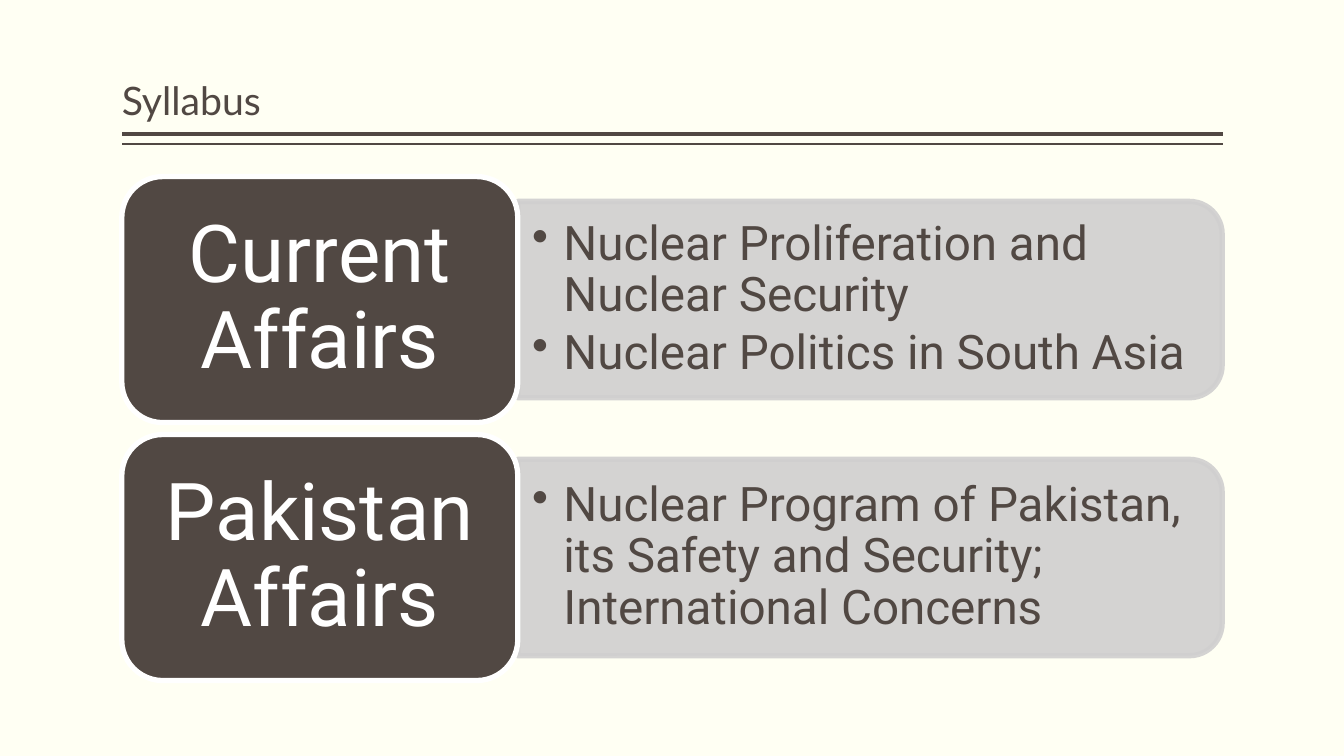
from lxml import etree
from pptx import Presentation
from pptx.dml.color import RGBColor
from pptx.enum.shapes import MSO_CONNECTOR, MSO_SHAPE
from pptx.enum.text import MSO_ANCHOR, PP_ALIGN
from pptx.oxml.ns import qn
from pptx.util import Cm, Pt

STRAIGHT = MSO_CONNECTOR.STRAIGHT
ROUNDED = MSO_SHAPE.ROUNDED_RECTANGLE
TOP_ROUNDED = MSO_SHAPE.ROUND_2_SAME_RECTANGLE
MIDDLE, BOTTOM = MSO_ANCHOR.MIDDLE, MSO_ANCHOR.BOTTOM
LEFT, CENTER = PP_ALIGN.LEFT, PP_ALIGN.CENTER

CREAM = RGBColor(0xFF, 0xFF, 0xF3)
BROWN = RGBColor(0x51, 0x48, 0x43)
GREY = RGBColor(0xD0, 0xCF, 0xCF)
WHITE = RGBColor(0xFF, 0xFF, 0xFF)

MARGIN, RIGHT_EDGE = 3.07, 30.81
TOPICS = [
    ("Current Affairs", ["Nuclear Proliferation and Nuclear Security",
                         "Nuclear Politics in South Asia"]),
    ("Pakistan Affairs", ["Nuclear Program of Pakistan, its Safety and Security; "
                          "International Concerns"]),
]
FIRST_TOP, ROW_PITCH = 4.45, 6.5
BLOCK_WIDTH, BLOCK_HEIGHT = 9.98, 6.2
PANEL_WIDTH, PANEL_HEIGHT = 17.75, 4.95
LIST_WIDTH, LIST_HEIGHT = 17.5, 4.47


class SyllabusSlide:
    def __init__(self, deck):
        self.page = deck.slides.add_slide(deck.slide_layouts[6])
        self.page.background.fill.solid()
        self.page.background.fill.fore_color.rgb = CREAM

    def rule(self, y, weight):
        line = self.page.shapes.add_connector(
            STRAIGHT, Cm(RIGHT_EDGE), Cm(y), Cm(MARGIN), Cm(y))
        line.line.color.rgb = BROWN
        line.line.width = Pt(weight)
        etree.SubElement(line._element.spPr, qn("a:effectLst"))

    def shape(self, kind, left, top, width, height, fill, outline):
        shape = self.page.shapes.add_shape(
            kind, Cm(left), Cm(top), Cm(width), Cm(height))
        shape.shadow.inherit = False
        shape.fill.solid()
        shape.fill.fore_color.rgb = fill
        shape.line.color.rgb = outline
        shape.line.width = Pt(3.78)
        return shape

    def fill_text(self, box, lines, size, font, color, anchor, align, inset_x, inset_y):
        frame = box.text_frame
        frame.word_wrap = True
        frame.vertical_anchor = anchor
        frame.margin_left = frame.margin_right = Cm(inset_x)
        frame.margin_top = frame.margin_bottom = Cm(inset_y)
        frame.text = "\n".join(lines)
        for para in frame.paragraphs:
            para.alignment = align
            para.line_spacing = 0.9
            for span in para.runs:
                span.font.size = Pt(size)
                span.font.name = font
                span.font.color.rgb = color

    def text(self, left, top, width, height, *style):
        box = self.page.shapes.add_textbox(Cm(left), Cm(top), Cm(width), Cm(height))
        self.fill_text(box, *style)
        return box

    def block(self, top, label):
        block = self.shape(ROUNDED, MARGIN, top, BLOCK_WIDTH, BLOCK_HEIGHT, BROWN, WHITE)
        self.fill_text(block, [label], 57, "Roboto", WHITE, MIDDLE, CENTER, 0.61, 0.3)

    def panel(self, left, middle):
        # The shape is turned a quarter so that its round corners face right
        panel = self.shape(TOP_ROUNDED, left + (PANEL_WIDTH - PANEL_HEIGHT) / 2,
                           middle - PANEL_WIDTH / 2, PANEL_HEIGHT, PANEL_WIDTH, GREY, GREY)
        panel.rotation = 90
        for color in panel._element.spPr.iter(qn("a:srgbClr")):
            etree.SubElement(color, qn("a:alpha"), val="90000")

    def bullets(self, left, middle, items):
        box = self.text(left, middle - LIST_HEIGHT / 2, LIST_WIDTH, LIST_HEIGHT,
                        items, 34, "Roboto", BROWN, MIDDLE, LEFT, 0.36, 0.18)
        for para in box.text_frame.paragraphs:
            para.level = 1
            para.space_after = Pt(4.5)
            properties = para._p.get_or_add_pPr()
            properties.set("marL", str(Cm(0.79)))
            properties.set("indent", str(-Cm(0.79)))
            etree.SubElement(properties, qn("a:buChar"), char="•")


def main():
    deck = Presentation()
    deck.slide_width, deck.slide_height = Cm(33.87), Cm(19.05)
    slide = SyllabusSlide(deck)

    # Title with its double rule
    slide.rule(3.38, 3)
    slide.rule(3.63, 1)
    slide.text(MARGIN, 0.2, RIGHT_EDGE - MARGIN, 3.05,
               ["Syllabus"], 28, "Lato", BROWN, BOTTOM, LEFT, 0, 0.13)

    # One row for each paper: panel, its bullets and the label block
    panel_left = MARGIN + BLOCK_WIDTH
    for row, (label, items) in enumerate(TOPICS):
        top = FIRST_TOP + row * ROW_PITCH
        middle = top + BLOCK_HEIGHT / 2
        slide.panel(panel_left, middle)
        slide.bullets(panel_left, middle, items)
        slide.block(top, label)

    deck.save("out.pptx")


if __name__ == "__main__":
    main()
